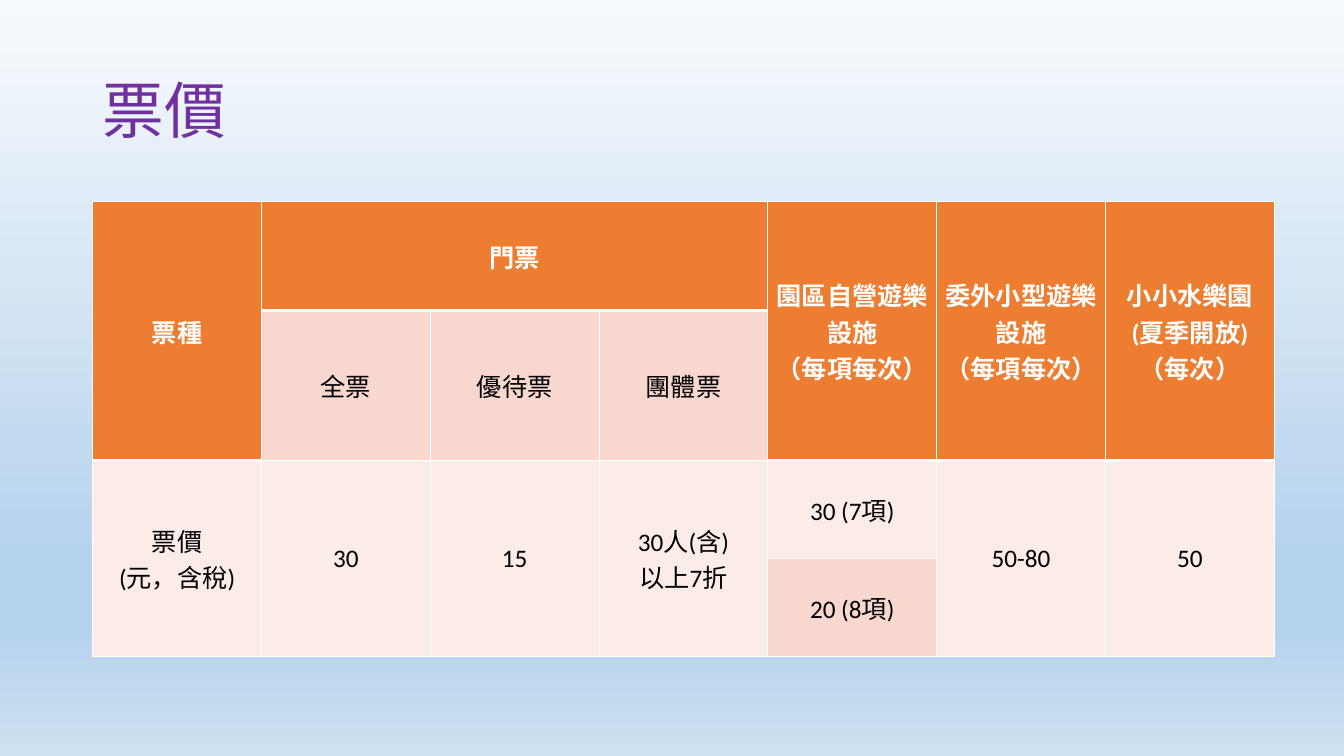
import pptx
import pptx.dml.color
import pptx.enum.text
import pptx.oxml
import pptx.oxml.ns
import pptx.util
from lxml import etree

Inches = pptx.util.Inches
Pt = pptx.util.Pt
qn = pptx.oxml.ns.qn

COLORS = {
    "title": "7030A0",
    "header": "ED7D31",
    "header_text": "FFFFFF",
    "band": "F8D7CE",
    "light": "FCECE8",
    "text": "000000",
    "border": "FFFFFF",
}
SKY = [(0, "F7FAFD"), (74, "B5D2EC"), (83, "B5D2EC"), (100, "CEE1F2")]
CJK_FONT = "Noto Sans CJK SC"
TABLE_FONT = "Calibri"

ROW_HEIGHTS = [1.08, 1.49, 0.97, 0.97]
COLUMN_COUNT = 7
TABLE_WIDTH = 11.72
PRICES = [
    (0, 0, 2, 1, "header", "票種"),
    (0, 1, 1, 3, "header", "門票"),
    (0, 4, 2, 1, "header", "園區自營遊樂設施\v（每項每次）"),
    (0, 5, 2, 1, "header", "委外小型遊樂設施\v（每項每次）"),
    (0, 6, 2, 1, "header", "小小水樂園\v(夏季開放)\v（每次）"),
    (1, 1, 1, 1, "band", "全票"),
    (1, 2, 1, 1, "band", "優待票"),
    (1, 3, 1, 1, "band", "團體票"),
    (2, 0, 2, 1, "light", "票價\v(元，含稅)"),
    (2, 1, 2, 1, "light", "30"),
    (2, 2, 2, 1, "light", "15"),
    (2, 3, 2, 1, "light", "30人(含)\v以上7折"),
    (2, 4, 1, 1, "light", "30 (7項)"),
    (2, 5, 2, 1, "light", "50-80"),
    (2, 6, 2, 1, "light", "50"),
    (3, 4, 1, 1, "band", "20 (8項)"),
]


class TicketSlide:
    """Holds the current slide and the style of its elements."""

    def __init__(self, presentation):
        self.slide = presentation.slides.add_slide(presentation.slide_layouts[5])

    def background(self, stops):
        fill = self.slide.background.fill
        fill.gradient()
        fill.gradient_angle = 270
        stop_list = self.slide.element.find(".//" + qn("a:gsLst"))
        for old_stop in list(stop_list):
            stop_list.remove(old_stop)
        for position, color in stops:
            stop = etree.SubElement(stop_list, qn("a:gs"), pos=str(position * 1000))
            etree.SubElement(stop, qn("a:srgbClr"), val=color)

    def format_text(self, frame, align, size, font, color, bold=False):
        for paragraph in frame.paragraphs:
            paragraph.alignment = align
            for run in paragraph.runs:
                run.font.size = Pt(size)
                run.font.bold = bold
                run.font.color.rgb = pptx.dml.color.RGBColor.from_string(COLORS[color])
                run.font.name = font
                etree.SubElement(run.font._element, qn("a:ea"), typeface=CJK_FONT)

    def title(self, text, left, top, width, height):
        title = self.slide.shapes.title
        title.left, title.top = Inches(left), Inches(top)
        title.width, title.height = Inches(width), Inches(height)
        frame = title.text_frame
        frame.text = text
        frame.auto_size = pptx.enum.text.MSO_AUTO_SIZE.NONE
        frame.vertical_anchor = pptx.enum.text.MSO_ANCHOR.MIDDLE
        frame.paragraphs[0].line_spacing = 0.9
        self.format_text(frame, pptx.enum.text.PP_ALIGN.LEFT, 44, CJK_FONT, "title")

    def borders(self, cell, widths):
        properties = cell._tc.get_or_add_tcPr()
        for index, (side, width) in enumerate(widths.items()):
            line = etree.Element(qn("a:ln" + side), w=str(Pt(width)))
            solid = etree.SubElement(line, qn("a:solidFill"))
            etree.SubElement(solid, qn("a:srgbClr"), val=COLORS["border"])
            properties.insert(index, line)

    def cell(self, table, row, column, row_span, column_span, role, text):
        is_header = role == "header"
        last_row, last_column = row + row_span - 1, column + column_span - 1
        origin = table.cell(row, column)
        if row_span * column_span > 1:
            origin.merge(table.cell(last_row, last_column))
        widths = {"L": 1, "R": 1, "T": 1, "B": 3 if is_header else 1}
        if row > 0:
            del widths["T"]
        for covered_row in range(row, last_row + 1):
            for covered_column in range(column, last_column + 1):
                covered = table.cell(covered_row, covered_column)
                covered.fill.solid()
                covered.fill.fore_color.rgb = pptx.dml.color.RGBColor.from_string(COLORS[role])
                self.borders(covered, widths)
        origin.margin_left = origin.margin_right = Inches(0.03)
        origin.margin_top = origin.margin_bottom = Inches(0.03)
        origin.vertical_anchor = pptx.enum.text.MSO_ANCHOR.MIDDLE
        origin.text_frame.text = text
        self.format_text(origin.text_frame, pptx.enum.text.PP_ALIGN.CENTER, 18, TABLE_FONT,
                         "header_text" if is_header else "text", is_header)

    def table(self, entries, left, top):
        table = self.slide.shapes.add_table(
            len(ROW_HEIGHTS), COLUMN_COUNT, Inches(left), Inches(top),
            Inches(TABLE_WIDTH), Inches(sum(ROW_HEIGHTS))).table
        for column in table.columns:
            column.width = Inches(TABLE_WIDTH / COLUMN_COUNT)
        for row, height in zip(table.rows, ROW_HEIGHTS):
            row.height = Inches(height)
        for entry in entries:
            self.cell(table, *entry)


def main():
    presentation = pptx.Presentation()
    presentation.slide_width = Inches(13.33)
    presentation.slide_height = Inches(7.5)
    tickets = TicketSlide(presentation)
    tickets.background(SKY)
    tickets.title("票價", 0.92, 0.4, 11.5, 1.45)
    tickets.table(PRICES, 0.92, 2)
    presentation.save("out.pptx")


if __name__ == "__main__":
    main()
